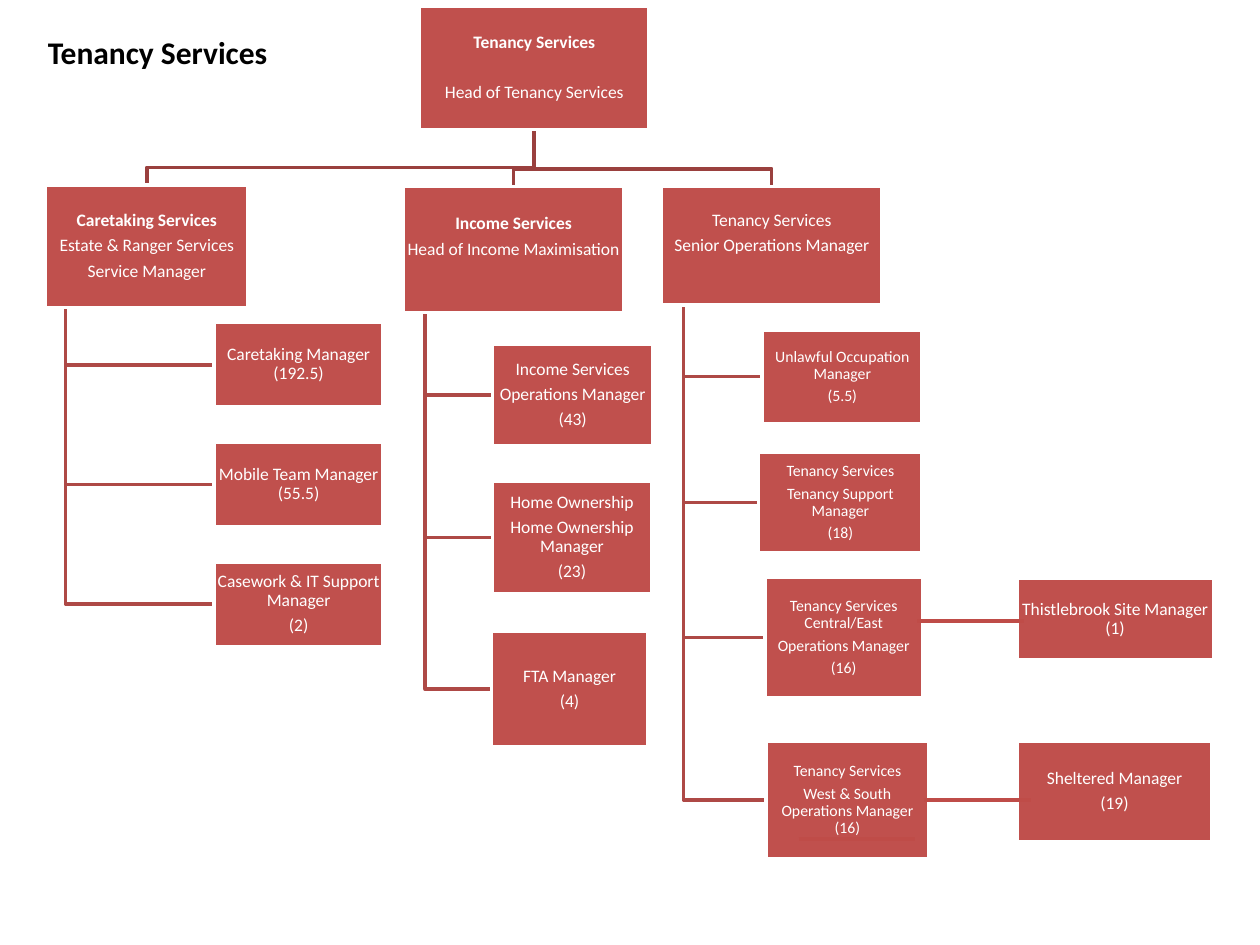
from dataclasses import dataclass

from lxml import etree
from pptx import Presentation
from pptx.dml.color import RGBColor
from pptx.enum.shapes import MSO_CONNECTOR, MSO_SHAPE
from pptx.enum.text import MSO_ANCHOR, PP_ALIGN
from pptx.oxml.ns import qn
from pptx.util import Inches, Pt

RECT = MSO_SHAPE.RECTANGLE
STRAIGHT = MSO_CONNECTOR.STRAIGHT
MIDDLE, TOP = MSO_ANCHOR.MIDDLE, MSO_ANCHOR.TOP
CENTER, LEFT = PP_ALIGN.CENTER, PP_ALIGN.LEFT

WHITE = RGBColor(0xFF, 0xFF, 0xFF)
BLACK = RGBColor(0x00, 0x00, 0x00)
BOX_RED = RGBColor(0xC0, 0x50, 0x4D)
TOP_LINE = RGBColor(0x9A, 0x40, 0x3E)
SIDE_LINE = RGBColor(0xAE, 0x49, 0x46)
LINK_LINE = RGBColor(0xBF, 0x4C, 0x48)
FONT = "Calibri"
INSET = 0.01


@dataclass
class Box:
    left: float
    top: float
    width: float
    height: float
    lines: tuple[str, ...]
    size: float = 10
    bold_first: bool = False
    gap: float = 0.35
    bottom_inset: float = INSET

    @property
    def bottom(self) -> float:
        return self.top + self.height

    @property
    def center_x(self) -> float:
        return self.left + self.width / 2

    @property
    def center_y(self) -> float:
        return self.top + self.height / 2


@dataclass
class Branch:
    manager: Box
    teams: tuple[Box, ...]


HEAD = Box(3.33, 0.05, 1.82, 0.98, ("Tenancy Services", "Head of Tenancy Services"),
           bold_first=True, gap=1.8)

BRANCHES = (
    Branch(
        Box(0.36, 1.47, 1.61, 0.97,
            ("Caretaking Services", "Estate & Ranger Services", "Service Manager"),
            bold_first=True),
        (
            Box(1.7, 2.56, 1.34, 0.67, ("Caretaking Manager (192.5)",)),
            Box(1.7, 3.51, 1.34, 0.67, ("Mobile Team Manager (55.5)",)),
            Box(1.7, 4.46, 1.34, 0.67, ("Casework & IT Support Manager", "(2)")),
        ),
    ),
    Branch(
        Box(3.2, 1.48, 1.75, 1, ("Income Services", "Head of Income Maximisation"),
            bold_first=True, bottom_inset=0.21),
        (
            Box(3.91, 2.73, 1.27, 0.81, ("Income Services", "Operations Manager", "(43)")),
            Box(3.91, 3.82, 1.26, 0.89, ("Home Ownership", "Home Ownership Manager", "(23)")),
            Box(3.9, 5.01, 1.24, 0.92, ("FTA Manager", "(4)")),
        ),
    ),
    Branch(
        Box(5.25, 1.48, 1.75, 0.94, ("Tenancy Services", "Senior Operations Manager"),
            bottom_inset=0.21),
        (
            Box(6.05, 2.62, 1.27, 0.74, ("Unlawful Occupation Manager", "(5.5)"), size=9),
            Box(6.02, 3.59, 1.3, 0.8,
                ("Tenancy Services", "Tenancy Support Manager", "(18)"), size=9),
            Box(6.07, 4.58, 1.25, 0.96,
                ("Tenancy Services Central/East", "Operations Manager", "(16)"), size=9),
            Box(6.08, 5.88, 1.29, 0.94,
                ("Tenancy Services", "West & South Operations Manager (16)"), size=9),
        ),
    ),
)

SITE_BOXES = (
    Box(8.07, 4.59, 1.56, 0.65, ("Thistlebrook Site Manager (1)",)),
    Box(8.07, 5.88, 1.55, 0.8, ("Sheltered Manager", "(19)")),
)

LINKS = ((7.28, 8.13, 4.93), (6.34, 7.26, 6.66), (7.33, 8.18, 6.35))


def write(p, text: str, *, size: float, color: RGBColor, bold: bool = False,
          align=CENTER) -> None:
    p.alignment = align
    r = p.add_run()
    r.text = text
    r.font.name = FONT
    r.font.size = Pt(size)
    r.font.bold = bold
    r.font.color.rgb = color


def draw_box(slide, box: Box) -> None:
    sp = slide.shapes.add_shape(RECT, Inches(box.left), Inches(box.top),
                                Inches(box.width), Inches(box.height))
    sp.shadow.inherit = False
    sp.fill.solid()
    sp.fill.fore_color.rgb = BOX_RED
    sp.line.color.rgb = WHITE
    sp.line.width = Pt(2)
    tf = sp.text_frame
    tf.word_wrap = True
    tf.vertical_anchor = MIDDLE
    tf.margin_left = tf.margin_right = tf.margin_top = Inches(INSET)
    tf.margin_bottom = Inches(box.bottom_inset)
    for i, text in enumerate(box.lines):
        p = tf.paragraphs[0] if i == 0 else tf.add_paragraph()
        p.line_spacing = 0.9
        p.space_after = Pt(box.size * box.gap)
        write(p, text, size=box.size, color=WHITE, bold=box.bold_first and i == 0)


def draw_path(slide, points: list[tuple[float, float]], color: RGBColor) -> None:
    start, *rest = [(Inches(x), Inches(y)) for x, y in points]
    builder = slide.shapes.build_freeform(*start)
    builder.add_line_segments(rest, close=False)
    sp = builder.convert_to_shape()
    sp.shadow.inherit = False
    sp.fill.background()
    sp.line.color.rgb = color
    sp.line.width = Pt(2)


def draw_down(slide, parent: Box, child: Box) -> None:
    bend = child.top - 0.14
    draw_path(slide, [(parent.center_x, parent.bottom), (parent.center_x, bend),
                      (child.center_x, bend), (child.center_x, child.top)], TOP_LINE)


def draw_side(slide, parent: Box, child: Box) -> None:
    trunk = parent.left + parent.width / 10
    draw_path(slide, [(trunk, parent.bottom), (trunk, child.center_y),
                      (child.left, child.center_y)], SIDE_LINE)


def draw_link(slide, x1: float, x2: float, y: float) -> None:
    line = slide.shapes.add_connector(STRAIGHT, Inches(x1), Inches(y), Inches(x2), Inches(y))
    line.line.color.rgb = LINK_LINE
    line.line.width = Pt(2.25)
    etree.SubElement(line._element.spPr, qn("a:effectLst"))


def draw_title(slide, text: str) -> None:
    title = slide.shapes.title
    title.left, title.top = Inches(0.28), Inches(0.21)
    title.width, title.height = Inches(3.54), Inches(0.4)
    tf = title.text_frame
    tf.word_wrap = True
    tf.vertical_anchor = TOP
    write(tf.paragraphs[0], text, size=18, color=BLACK, bold=True, align=LEFT)


def main() -> None:
    prs = Presentation()
    prs.slide_width, prs.slide_height = Inches(10), Inches(7.5)
    slide = prs.slides.add_slide(prs.slide_layouts[5])
    draw_title(slide, "Tenancy Services")
    for branch in reversed(BRANCHES):
        for team in reversed(branch.teams):
            draw_side(slide, branch.manager, team)
        draw_down(slide, HEAD, branch.manager)
    draw_box(slide, HEAD)
    for branch in BRANCHES:
        for box in (branch.manager, *branch.teams):
            draw_box(slide, box)
    for box in SITE_BOXES:
        draw_box(slide, box)
    for link in LINKS:
        draw_link(slide, *link)
    prs.save("out.pptx")


if __name__ == "__main__":
    main()
